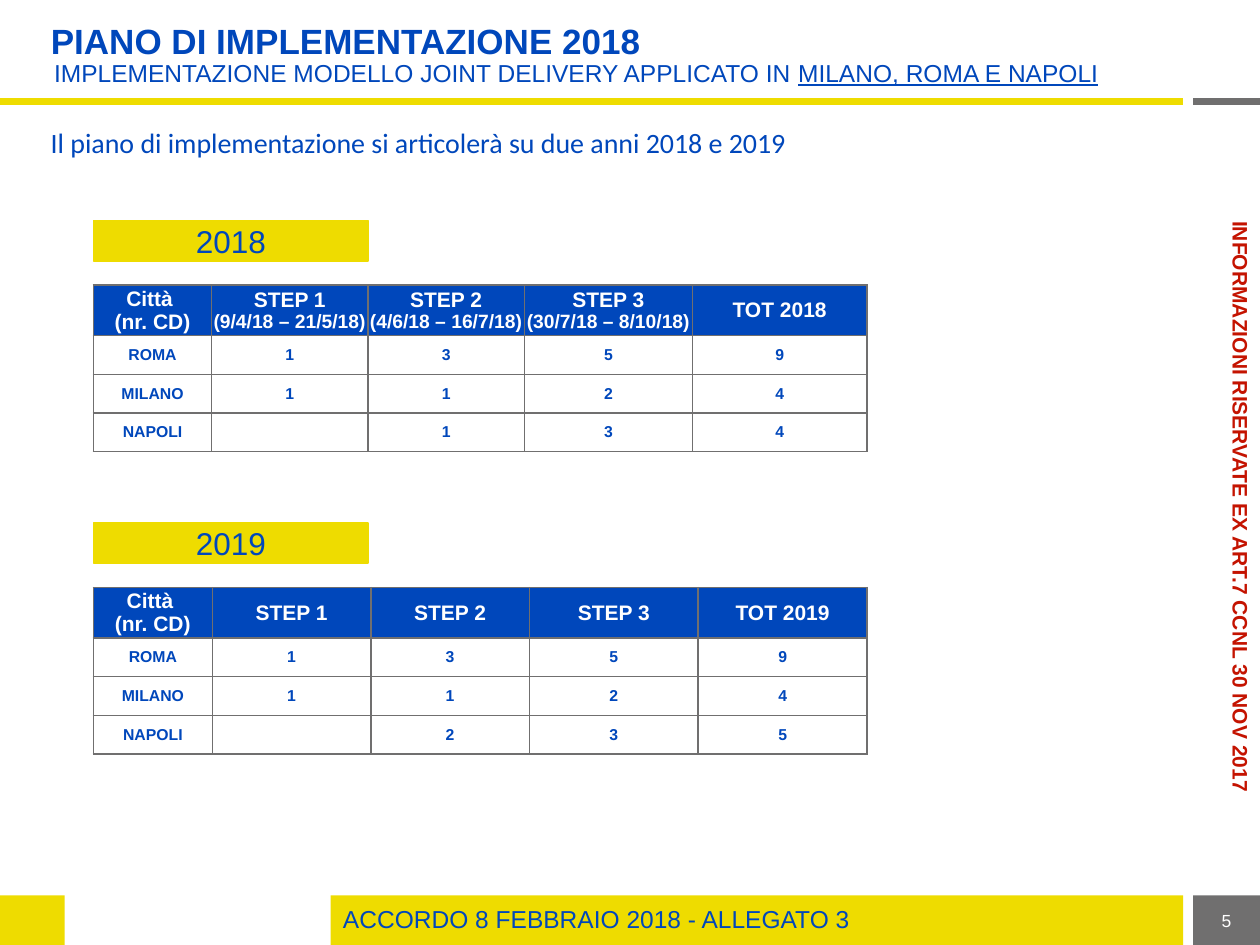
from pptx import Presentation
from pptx import util as u
from pptx.dml.color import RGBColor
from pptx.enum import shapes, text
from pptx.oxml.ns import qn
from lxml import etree

Pt = u.Pt
MIDDLE, TOP = text.MSO_ANCHOR.MIDDLE, text.MSO_ANCHOR.TOP
CENTER, LEFT = text.PP_ALIGN.CENTER, text.PP_ALIGN.LEFT

# Content
TITLE = "PIANO DI IMPLEMENTAZIONE 2018"
SUBTITLE = ("IMPLEMENTAZIONE MODELLO JOINT DELIVERY APPLICATO IN ",
            "MILANO, ROMA E NAPOLI")
INTRO = "Il piano di implementazione si articolerà su due anni 2018 e 2019"
FOOTER = "ACCORDO 8 FEBBRAIO 2018 - ALLEGATO 3"
NOTICE = "INFORMAZIONI RISERVATE EX ART.7 CCNL 30 NOV 2017"
PAGE = "5"
CITY = ("Città ", "(nr. CD)")
PLANS = [
    {"year": "2018", "top": 126, "columns": [67.5, 89.4, 89.4, 96, 99.8],
     "head": [CITY, ("STEP 1", "(9/4/18 – 21/5/18)"),
              ("STEP 2", "(4/6/18 – 16/7/18)"),
              ("STEP 3", "(30/7/18 – 8/10/18)"), ("TOT 2018",)],
     "cities": [("ROMA", "1", "3", "5", "9"),
                ("MILANO", "1", "1", "2", "4"),
                ("NAPOLI", "", "1", "3", "4")]},
    {"year": "2019", "top": 298.8, "columns": [67.9, 90.6, 90.6, 96.5, 96.5],
     "head": [CITY, ("STEP 1",), ("STEP 2",), ("STEP 3",), ("TOT 2019",)],
     "cities": [("ROMA", "1", "3", "5", "9"),
                ("MILANO", "1", "1", "2", "4"),
                ("NAPOLI", "", "2", "3", "5")]},
]

THEME = {
    "blue": "0047BB", "yellow": "EEDC00", "grey": "706F6F",
    "white": "FFFFFF", "red": "C41300",
    "font": "Arial", "intro_font": "Calibri",
    "title": 20, "year": 18, "intro": 16, "body": 14, "head": 12,
    "dates": 11, "page": 10, "cell": 9,
}

# Layout
WIDTH, HEIGHT = 720, 540
RULE_Y, BAND_TOP, BAND_HEIGHT = 58.3, 511.7, 28.3
BAND_LEFT, BAND_RIGHT, PAGE_LEFT = 188.9, 676.1, 681.8
PLAN_LEFT, TABLE_DROP = 53.4, 37
HEAD_HEIGHT, ROW_HEIGHT = 26.6, 22.1

prs = Presentation()
prs.slide_width, prs.slide_height = Pt(WIDTH), Pt(HEIGHT)
slide = prs.slides.add_slide(prs.slide_layouts[6])


def color(name):
    return RGBColor.from_string(THEME[name])


def add_run(paragraph, words, size, ink="blue", bold=False, font="font"):
    run = paragraph.add_run()
    run.text = words
    run.font.name, run.font.size = THEME[font], Pt(THEME[size])
    run.font.bold, run.font.color.rgb = bold, color(ink)
    return run


def add_label(box, words, size, align=LEFT, anchor=MIDDLE, spacing=None, **style):
    """Place text in a new box and return its paragraph."""
    label = slide.shapes.add_textbox(*map(Pt, box))
    frame = label.text_frame
    frame.word_wrap, frame.vertical_anchor = True, anchor
    paragraph = frame.paragraphs[0]
    paragraph.alignment, paragraph.line_spacing = align, spacing
    add_run(paragraph, words, size, **style)
    return label, paragraph


def add_block(box, fill, outlined=False):
    block = slide.shapes.add_shape(shapes.MSO_SHAPE.RECTANGLE, *map(Pt, box))
    block.shadow.inherit = False
    block.fill.solid()
    block.fill.fore_color.rgb = color(fill)
    if outlined:
        block.line.color.rgb, block.line.width = color(fill), Pt(1)
    else:
        block.line.fill.background()
    return block


def add_rule(start, end, ink):
    rule = slide.shapes.add_connector(
        shapes.MSO_CONNECTOR.STRAIGHT, Pt(start), Pt(RULE_Y), Pt(end), Pt(RULE_Y))
    rule.line.color.rgb, rule.line.width = color(ink), Pt(4)
    etree.SubElement(rule._element.spPr, qn("a:effectLst"))


def fill_cell(cell, lines, sizes, ink, fill):
    cell.margin_left = cell.margin_right = cell.margin_top = cell.margin_bottom = 0
    cell.vertical_anchor = MIDDLE
    frame = cell.text_frame
    for i, (words, size) in enumerate(zip(lines, sizes)):
        paragraph = frame.add_paragraph() if i else frame.paragraphs[0]
        paragraph.alignment = CENTER
        add_run(paragraph, words, size, ink, bold=True)
    properties = cell._tc.get_or_add_tcPr()
    for side in ("lnL", "lnR", "lnT", "lnB"):
        border = etree.SubElement(properties, qn("a:" + side), w=str(Pt(1)))
        paint = etree.SubElement(border, qn("a:solidFill"))
        etree.SubElement(paint, qn("a:srgbClr"), val=THEME["grey"])
    cell.fill.solid()
    cell.fill.fore_color.rgb = color(fill)


def add_plan(plan):
    # Year tag
    tag = add_block((PLAN_LEFT, plan["top"], 157, 23), "yellow", outlined=True)
    tag.text_frame.vertical_anchor = MIDDLE
    year = tag.text_frame.paragraphs[0]
    year.alignment = CENTER
    add_run(year, plan["year"], "year")

    # City table
    heights = [HEAD_HEIGHT] + [ROW_HEIGHT] * len(plan["cities"])
    table = slide.shapes.add_table(
        len(heights), len(plan["columns"]), Pt(PLAN_LEFT),
        Pt(plan["top"] + TABLE_DROP), Pt(sum(plan["columns"])),
        Pt(sum(heights))).table
    table.first_row = table.horz_banding = False
    for column, width in zip(table.columns, plan["columns"]):
        column.width = Pt(width)
    for row, height in zip(table.rows, heights):
        row.height = Pt(height)
    for c, lines in enumerate(plan["head"]):
        second = "head" if lines == CITY else "dates"
        fill_cell(table.cell(0, c), lines, ("head", second), "white", "blue")
    for r, city in enumerate(plan["cities"], 1):
        for c, value in enumerate(city):
            fill_cell(table.cell(r, c), [value], ["cell"], "blue", "white")


# Frame: rules, bottom band and page number
page_box = (PAGE_LEFT, BAND_TOP, WIDTH - PAGE_LEFT, BAND_HEIGHT)
band_box = (BAND_LEFT, BAND_TOP, BAND_RIGHT - BAND_LEFT, BAND_HEIGHT)
add_rule(0, BAND_RIGHT, "yellow")
add_rule(PAGE_LEFT, WIDTH, "grey")
add_block((0, BAND_TOP, 37, BAND_HEIGHT), "yellow")
add_block(band_box, "yellow")
add_block(page_box, "grey")
add_label(page_box, PAGE, "page", CENTER, ink="white")
add_label(band_box, FOOTER, "body", spacing=0.9)

# Vertical notice
notice, _ = add_label((545, 282.2, 328.3, 14.4), NOTICE, "head", CENTER, TOP,
                      ink="red", bold=True)
notice.rotation = 90
edge = notice.text_frame
edge.word_wrap = False
edge.margin_left = edge.margin_right = edge.margin_top = edge.margin_bottom = 0

# Headings
add_label((22, 10.1, 676, 28), TITLE, "title", anchor=TOP, spacing=0.9, bold=True)
_, subtitle = add_label((23.8, 27.4, 674.6, 30.2), SUBTITLE[0], "body", spacing=0.9)
add_run(subtitle, SUBTITLE[1], "body").font.underline = True
add_label((21.9, 70.6, 676, 23.8), INTRO, "intro", anchor=TOP, spacing=0.9,
          font="intro_font")

# Yearly plans
for plan in PLANS:
    add_plan(plan)

prs.save("out.pptx")
